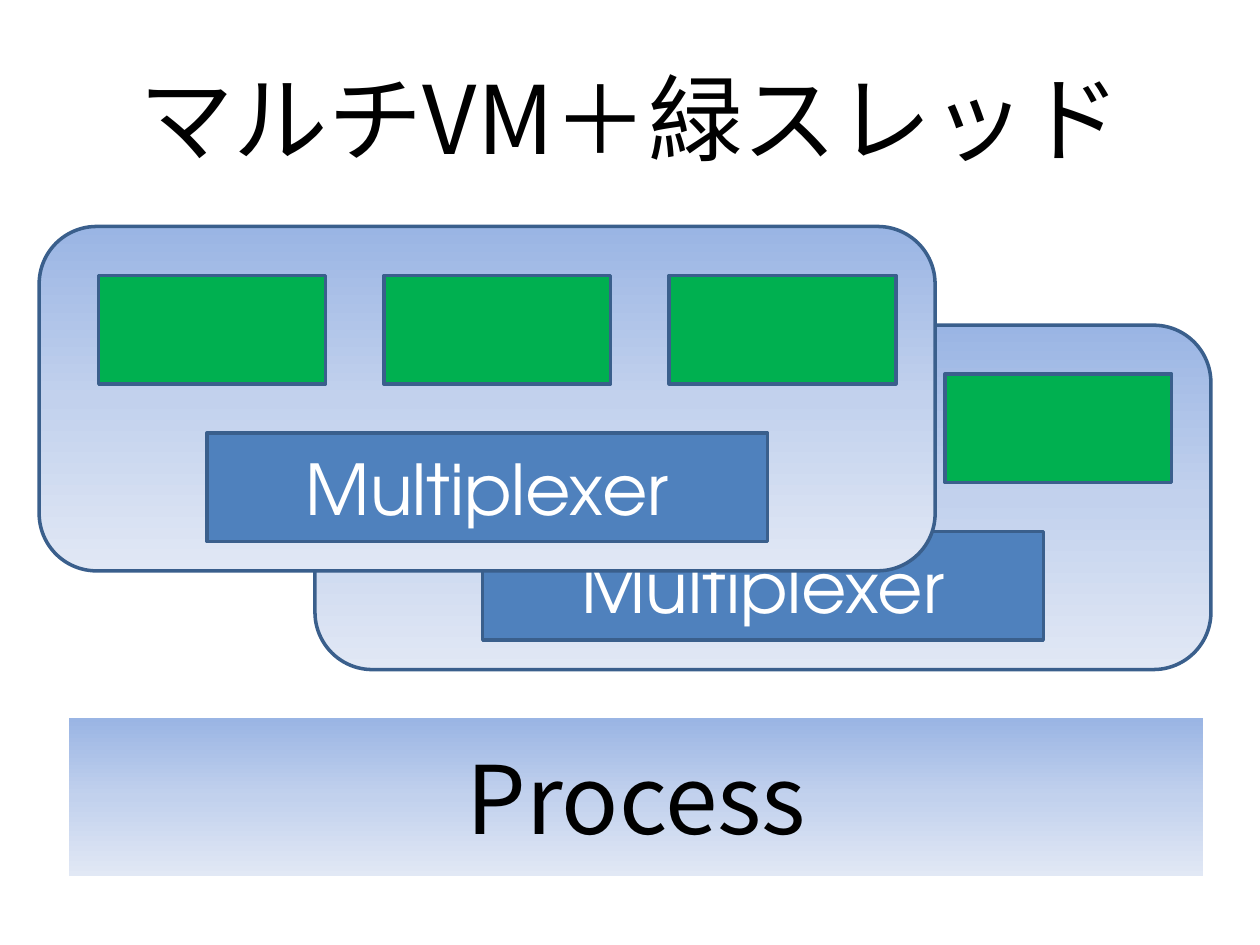
import copy

import pptx
import pptx.dml.color
import pptx.enum.shapes
import pptx.enum.text
import pptx.oxml.ns
import pptx.util
from lxml import etree

Pt = pptx.util.Pt
SHAPE = pptx.enum.shapes.MSO_SHAPE

COLORS = {
    "text": "000000",
    "light_text": "FFFFFF",
    "outline": "3A5F8C",
    "thread": "00B050",
    "multiplexer": "4F81BD",
}
GRADIENT = [(0, "9AB5E4"), (0.5, "C2D1ED"), (1, "E1E8F5")]
SANS = "Noto Sans CJK JP"
GEOMETRIC = "TeX Gyre Adventor"


def rgb(value):
    return pptx.dml.color.RGBColor.from_string(value)


def set_text(sp, text, size, font, color):
    tf = sp.text_frame
    tf.word_wrap = True
    tf.vertical_anchor = pptx.enum.text.MSO_ANCHOR.MIDDLE
    tf.text = text
    p = tf.paragraphs[0]
    p.alignment = pptx.enum.text.PP_ALIGN.CENTER
    r = p.runs[0]
    r.font.size = Pt(size)
    r.font.color.rgb = rgb(color)
    r.font.name = font
    ea = etree.SubElement(r.font._element, pptx.oxml.ns.qn("a:ea"))
    ea.set("typeface", font)


def fill_gradient(sp):
    """Fill the shape with the three-stop gradient, from top to bottom."""
    sp.fill.gradient()
    sp.fill.gradient_angle = 270
    first = sp.fill.gradient_stops[0]._gs
    first.addnext(copy.deepcopy(first))
    for stop, (position, color) in zip(sp.fill.gradient_stops, GRADIENT):
        stop.position = position
        stop.color.rgb = rgb(color)


def add_box(s, kind, left, top, width, height, fill=None, outlined=True):
    """Add a shape; without a fill colour it gets the gradient."""
    sp = s.shapes.add_shape(kind, Pt(left), Pt(top), Pt(width), Pt(height))
    sp.shadow.inherit = False
    if fill:
        sp.fill.solid()
        sp.fill.fore_color.rgb = rgb(fill)
    else:
        fill_gradient(sp)
    if outlined:
        sp.line.color.rgb = rgb(COLORS["outline"])
        sp.line.width = Pt(2)
    else:
        sp.line.fill.background()
    return sp


def add_title(s, left, top, width, height):
    sp = s.shapes.add_textbox(Pt(left), Pt(top), Pt(width), Pt(height))
    set_text(sp, "マルチVM＋緑スレッド", 54, SANS, COLORS["text"])


def add_vm(s, left, top, width, height):
    """Add a virtual machine with three green threads above a multiplexer."""
    add_box(s, SHAPE.ROUNDED_RECTANGLE, left, top, width, height)
    for i in range(3):
        add_box(s, SHAPE.RECTANGLE, left + 34 + 163 * i, top + 28, 129.6, 62,
                COLORS["thread"])
    sp = add_box(s, SHAPE.RECTANGLE, left + 95.8, top + 118, 320.4, 62,
                 COLORS["multiplexer"])
    set_text(sp, "Multiplexer", 40, GEOMETRIC, COLORS["light_text"])


def add_process(s, left, top, width, height):
    sp = add_box(s, SHAPE.RECTANGLE, left, top, width, height, outlined=False)
    set_text(sp, "Process", 54, SANS, COLORS["text"])


def main():
    prs = pptx.Presentation()
    prs.slide_width, prs.slide_height = Pt(720), Pt(540)
    s = prs.slides.add_slide(prs.slide_layouts[6])
    add_title(s, 36, 21.6, 648, 90)
    add_process(s, 39.6, 410.4, 648, 90)
    for left, top in [(180, 185.8), (22.4, 129.4)]:
        add_vm(s, left, top, 512, 196.8)
    prs.save("out.pptx")


if __name__ == "__main__":
    main()
